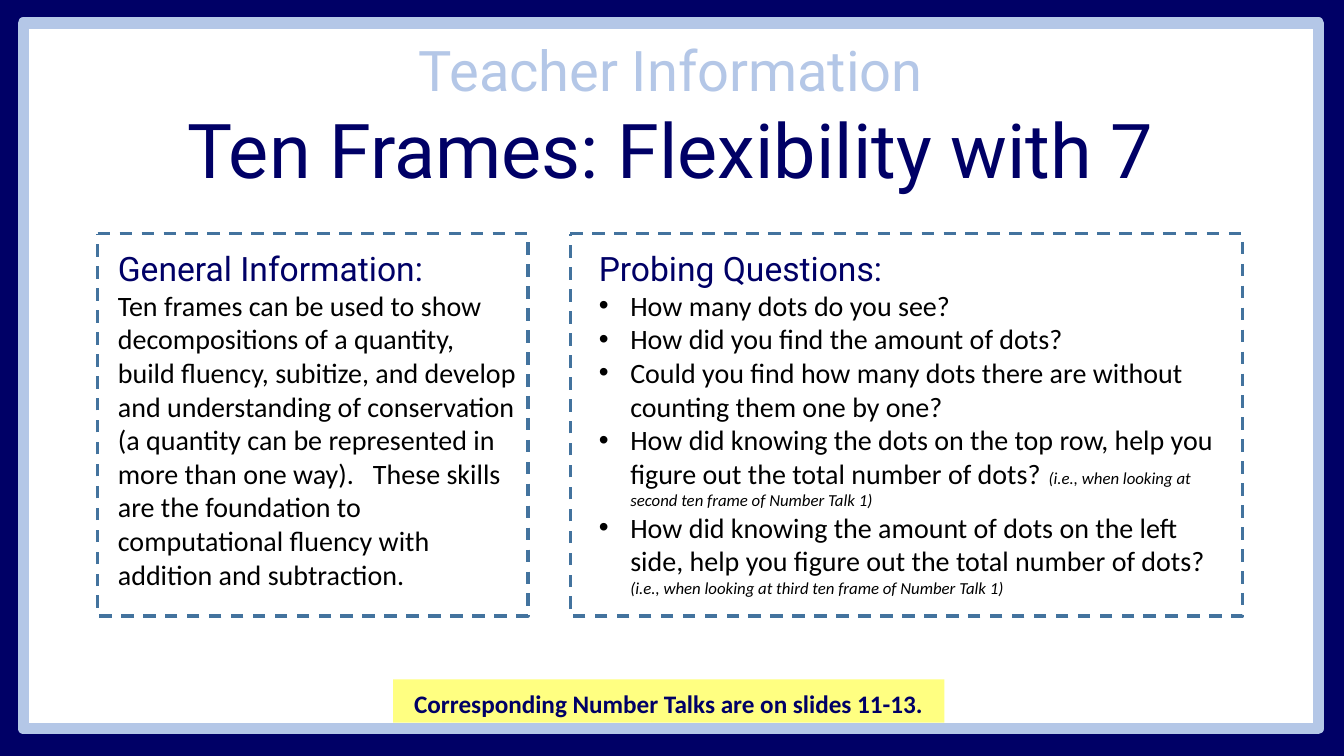
"""Build the teacher information slide for the ten frames number talks."""
from pptx import Presentation, util as u
from pptx.dml.color import RGBColor
from pptx.enum import dml, shapes, text
from pptx.oxml.ns import qn
from lxml import etree

Pt = u.Pt
NAVY = RGBColor(0x00, 0x00, 0x66)
PALE_BLUE = RGBColor(0xB4, 0xC7, 0xE7)
STEEL_BLUE = RGBColor(0x43, 0x73, 0x9E)
YELLOW = RGBColor(0xFF, 0xFF, 0x81)
WHITE = RGBColor(0xFF, 0xFF, 0xFF)
BLACK = RGBColor(0x00, 0x00, 0x00)
HEADING_FONT, BODY_FONT = "Roboto", "Calibri"

TITLE_LINES = [("Teacher Information", 40, PALE_BLUE),
               ("Ten Frames: Flexibility with 7", 54, NAVY)]
BANNER_TEXT = "Corresponding Number Talks are on slides 11-13."
GENERAL = [
    ("Ten frames can be used to show decompositions of a quantity,  build fluency, "
     "subitize, and develop and understanding of conservation (a quantity can be "
     "represented in more than one way).   These skills are the foundation to "
     "computational fluency with addition and subtraction.", ""),
]
QUESTIONS = [
    ("How many dots do you see?", ""),
    ("How did you find the amount of dots?", ""),
    ("Could you find how many dots there are without counting them one by one?", ""),
    ("How did knowing the dots on the top row, help you figure out the total number of dots?",
     "  (i.e., when looking at second ten frame of Number Talk 1)"),
    ("How did knowing the amount of dots on the left side, help you figure out the total "
     "number of dots? ", " (i.e., when looking at third ten frame of Number Talk 1)"),
]
PANELS = [
    {"heading": "General Information:", "items": GENERAL, "bullet": None,
     "text_left": 77, "text_width": 300, "left": 69.8, "width": 307.4},
    {"heading": "Probing Questions:", "items": QUESTIONS, "bullet": "•",
     "text_left": 420.5, "text_width": 467.3, "left": 407.5, "width": 480.2},
]
PANEL_TOP, PANEL_HEIGHT = 167, 273
TEXT_TOP, TEXT_HEIGHT = 173.5, 260
BULLET_INDENT = 22.5


def style(run, size, color, font, bold=False, italic=False):
    """Format one run."""
    run.font.size, run.font.name = Pt(size), font
    run.font.color.rgb = color
    run.font.bold, run.font.italic = bold, italic


def place(shape, left, top, width, height):
    """Move a placeholder and fix its text settings."""
    shape.left, shape.top, shape.width, shape.height = map(Pt, (left, top, width, height))
    frame = shape.text_frame
    frame.word_wrap = True
    frame.auto_size = text.MSO_AUTO_SIZE.NONE
    frame.vertical_anchor = text.MSO_ANCHOR.TOP
    return frame


def add_box(kind, box, fill=None, line=None, line_width=0):
    """Add a preset shape with the given fill and outline."""
    shape = slide.shapes.add_shape(kind, *map(Pt, box))
    shape.shadow.inherit = False
    if fill is None:
        shape.fill.background()
    else:
        shape.fill.solid()
        shape.fill.fore_color.rgb = fill
    if line is None:
        shape.line.fill.background()
    else:
        shape.line.color.rgb = line
        shape.line.width = Pt(line_width)
    return shape


def set_bullet(paragraph, bullet):
    """Set or clear the bullet and its hanging indent."""
    indent = Pt(BULLET_INDENT) if bullet else 0
    properties = paragraph._p.get_or_add_pPr()
    properties.set("marL", str(indent))
    properties.set("indent", str(-indent))
    if bullet:
        font = etree.SubElement(properties, qn("a:buFont"))
        font.set("typeface", "Arial")
        etree.SubElement(properties, qn("a:buChar")).set("char", bullet)
    else:
        etree.SubElement(properties, qn("a:buNone"))


def fill_panel(frame, panel):
    """Write a heading and its paragraphs into a body placeholder."""
    entries = [(panel["heading"], "")] + panel["items"]
    for index, (words, hint) in enumerate(entries):
        paragraph = frame.paragraphs[0] if index == 0 else frame.add_paragraph()
        paragraph.text = words
        paragraph.space_before = Pt(0)
        set_bullet(paragraph, panel["bullet"] if index else None)
        if index == 0:
            style(paragraph.runs[0], 24, NAVY, HEADING_FONT)
        else:
            style(paragraph.runs[0], 20, BLACK, BODY_FONT)
        if hint:
            run = paragraph.add_run()
            run.text = hint
            style(run, 12, BLACK, BODY_FONT, italic=True)


presentation = Presentation()
presentation.slide_width, presentation.slide_height = Pt(960), Pt(540)
slide = presentation.slides.add_slide(presentation.slide_layouts[3])
slide.background.fill.solid()
slide.background.fill.fore_color.rgb = NAVY

border = add_box(shapes.MSO_SHAPE.RECTANGLE, (16.5, 16.5, 925.2, 504), WHITE, PALE_BLUE, 8)
border.element.getparent().insert(2, border.element)

title_frame = place(slide.shapes.title, 16.5, 21.6, 925.2, 121)
title_frame.text = "\n".join(words for words, _, _ in TITLE_LINES)
for paragraph, (_, size, color) in zip(title_frame.paragraphs, TITLE_LINES):
    paragraph.alignment = text.PP_ALIGN.CENTER
    style(paragraph.runs[0], size, color, HEADING_FONT)

for number, panel in enumerate(PANELS, start=1):
    body_frame = place(slide.placeholders[number], panel["text_left"], TEXT_TOP,
                       panel["text_width"], TEXT_HEIGHT)
    fill_panel(body_frame, panel)
    outline = add_box(shapes.MSO_SHAPE.ROUNDED_RECTANGLE,
                      (panel["left"], PANEL_TOP, panel["width"], PANEL_HEIGHT),
                      line=STEEL_BLUE, line_width=2.25)
    outline.adjustments[0] = 0
    outline.line.dash_style = dml.MSO_LINE.DASH

banner = add_box(shapes.MSO_SHAPE.RECTANGLE, (280.8, 485.3, 393.8, 31), YELLOW)
banner_frame = banner.text_frame
banner_frame.margin_top, banner_frame.margin_bottom = Pt(4), 0
banner_frame.vertical_anchor = text.MSO_ANCHOR.MIDDLE
banner_frame.text = BANNER_TEXT
banner_frame.paragraphs[0].alignment = text.PP_ALIGN.CENTER
style(banner_frame.paragraphs[0].runs[0], 18, NAVY, BODY_FONT, bold=True)

presentation.save("out.pptx")
